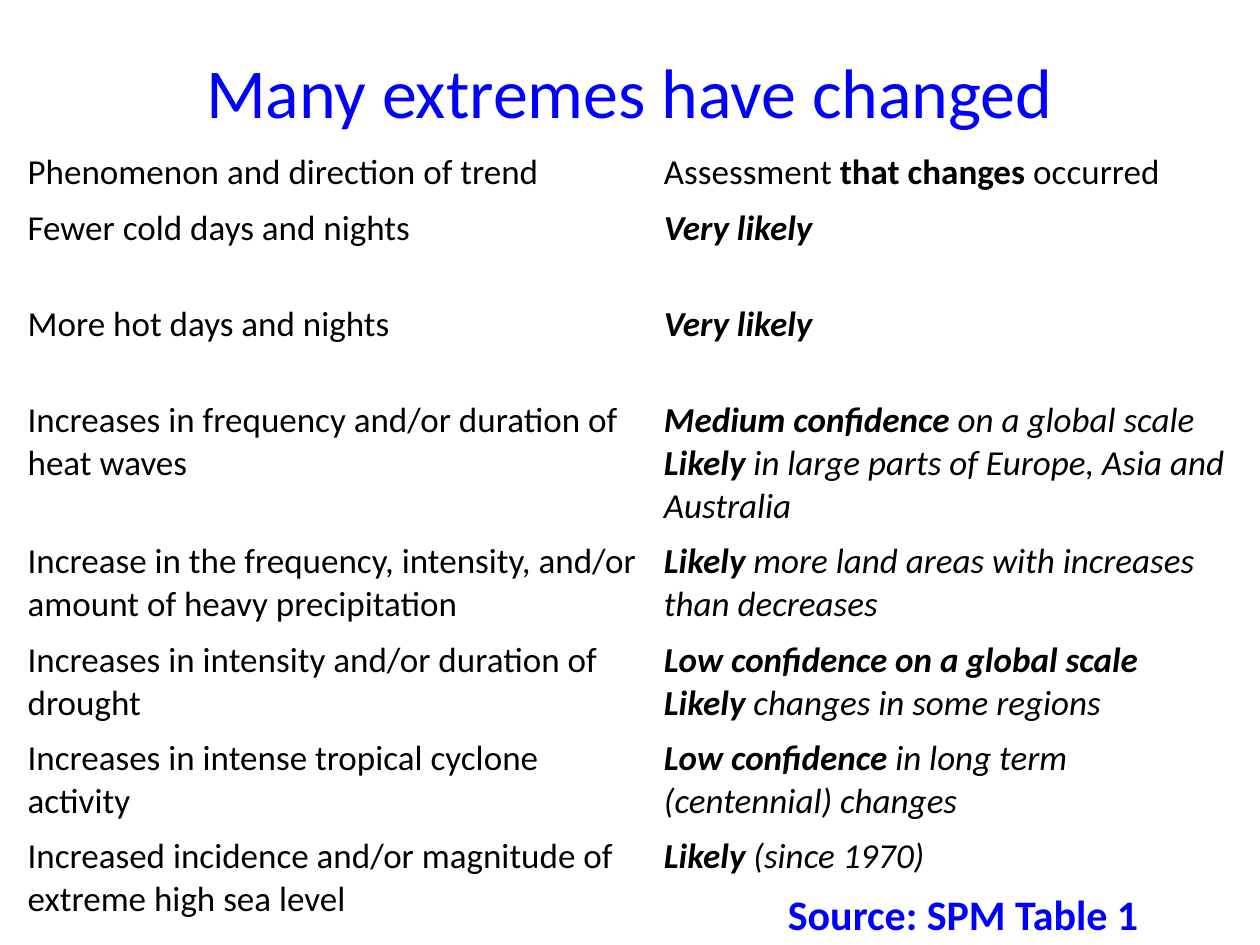
from dataclasses import dataclass

from lxml.etree import SubElement
from pptx import Presentation
from pptx.dml.color import RGBColor
from pptx.enum.text import MSO_ANCHOR as Anchor, PP_ALIGN as Align
from pptx.oxml.ns import qn
from pptx.util import Pt

COLORS = {"title": "0000FF", "body": "000000", "grid": "FFFFFF"}
FONT = "Calibri"
BODY_SIZE = 20


@dataclass
class Span:
    text: str
    bold: bool = False
    italic: bool = False


@dataclass
class Finding:
    phenomenon: list[str]
    assessment: list[list[Span]]
    height: float = 55


@dataclass
class Label:
    text: str
    left: float
    top: float
    width: float
    height: float
    size: float
    bold: bool = False
    side_inset: float = 7.2
    anchor: Anchor = Anchor.TOP


def strong(text: str) -> Span:
    return Span(text, bold=True, italic=True)


def soft(text: str) -> Span:
    return Span(text, italic=True)


FINDINGS = [
    Finding(["Phenomenon and direction of trend"],
            [[Span("Assessment "), Span("that changes", bold=True), Span(" occurred")]], 31.5),
    Finding(["Fewer cold days and nights"], [[strong("Very likely")]]),
    Finding(["More hot days and nights"], [[strong("Very likely")]]),
    Finding(["Increases in frequency and/or duration of heat waves"],
            [[strong("Medium confidence "), soft("on a global scale")],
             [strong("Likely"), soft(" in large parts of Europe, Asia and Australia")]], 78),
    Finding(["Increase in the frequency, intensity, and/or amount of heavy precipitation"],
            [[strong("Likely"), soft(" more land areas with increases than decreases")]]),
    Finding(["Increases in intensity and/or duration of drought"],
            [[strong("Low confidence on a global scale")],
             [strong("Likely"), soft(" changes in some regions")]]),
    Finding(["Increases in intense tropical cyclone activity"],
            [[strong("Low confidence "), soft("in long term (centennial) changes")]]),
    Finding(["Increased incidence and/or magnitude of", "extreme high sea level"],
            [[strong("Likely "), soft("(since 1970)")]]),
]
COLUMN_WIDTHS = [363.6, 339.1]
TITLE = Label("Many extremes have changed", 19.5, 20.2, 680.4, 62.6, 40,
              side_inset=0, anchor=Anchor.MIDDLE)
SOURCE = Label("Source: SPM Table 1", 383, 504, 334.8, 36, 24, bold=True)


def style_run(run, size: float, color: str, bold: bool = False, italic: bool = False) -> None:
    font = run.font
    font.name, font.size = FONT, Pt(size)
    font.bold, font.italic = bold, italic
    font.color.rgb = RGBColor.from_string(COLORS[color])


def add_label(slide, label: Label) -> None:
    box = slide.shapes.add_textbox(Pt(label.left), Pt(label.top), Pt(label.width), Pt(label.height))
    frame = box.text_frame
    frame.word_wrap = True
    frame.vertical_anchor = label.anchor
    frame.margin_left = frame.margin_right = Pt(label.side_inset)
    frame.text = label.text
    paragraph = frame.paragraphs[0]
    paragraph.alignment = Align.CENTER
    style_run(paragraph.runs[0], label.size, "title", label.bold)


def set_borders(cell, bottom: float) -> None:
    properties = cell._tc.get_or_add_tcPr()
    for side, width in (("L", 1), ("R", 1), ("T", 1), ("B", bottom)):
        line = SubElement(properties, qn(f"a:ln{side}"), w=str(Pt(width)))
        SubElement(SubElement(line, qn("a:solidFill")), qn("a:srgbClr"), val=COLORS["grid"])


def fill_cell(cell, lines: list[list[Span]], bottom: float) -> None:
    set_borders(cell, bottom)
    cell.fill.background()
    frame = cell.text_frame
    for number, spans in enumerate(lines):
        paragraph = frame.add_paragraph() if number else frame.paragraphs[0]
        for span in spans:
            run = paragraph.add_run()
            run.text = span.text
            style_run(run, BODY_SIZE, "body", span.bold, span.italic)


def add_findings(slide, findings: list[Finding]) -> None:
    table = slide.shapes.add_table(
        len(findings), len(COLUMN_WIDTHS), Pt(8.6), Pt(82.8),
        Pt(sum(COLUMN_WIDTHS)), Pt(sum(finding.height for finding in findings))).table
    table.first_row = table.horz_banding = False
    for column, width in zip(table.columns, COLUMN_WIDTHS):
        column.width = Pt(width)
    for index, finding in enumerate(findings):
        table.rows[index].height = Pt(finding.height)
        bottom = 1 if index else 3
        fill_cell(table.cell(index, 0), [[Span(line)] for line in finding.phenomenon], bottom)
        fill_cell(table.cell(index, 1), finding.assessment, bottom)


def main() -> None:
    deck = Presentation()
    deck.slide_width, deck.slide_height = Pt(720), Pt(540)
    slide = deck.slides.add_slide(deck.slide_layouts[6])

    # Table of trends and their assessment
    add_findings(slide, FINDINGS)

    # Title and source
    for label in (TITLE, SOURCE):
        add_label(slide, label)

    deck.save("out.pptx")


if __name__ == "__main__":
    main()
